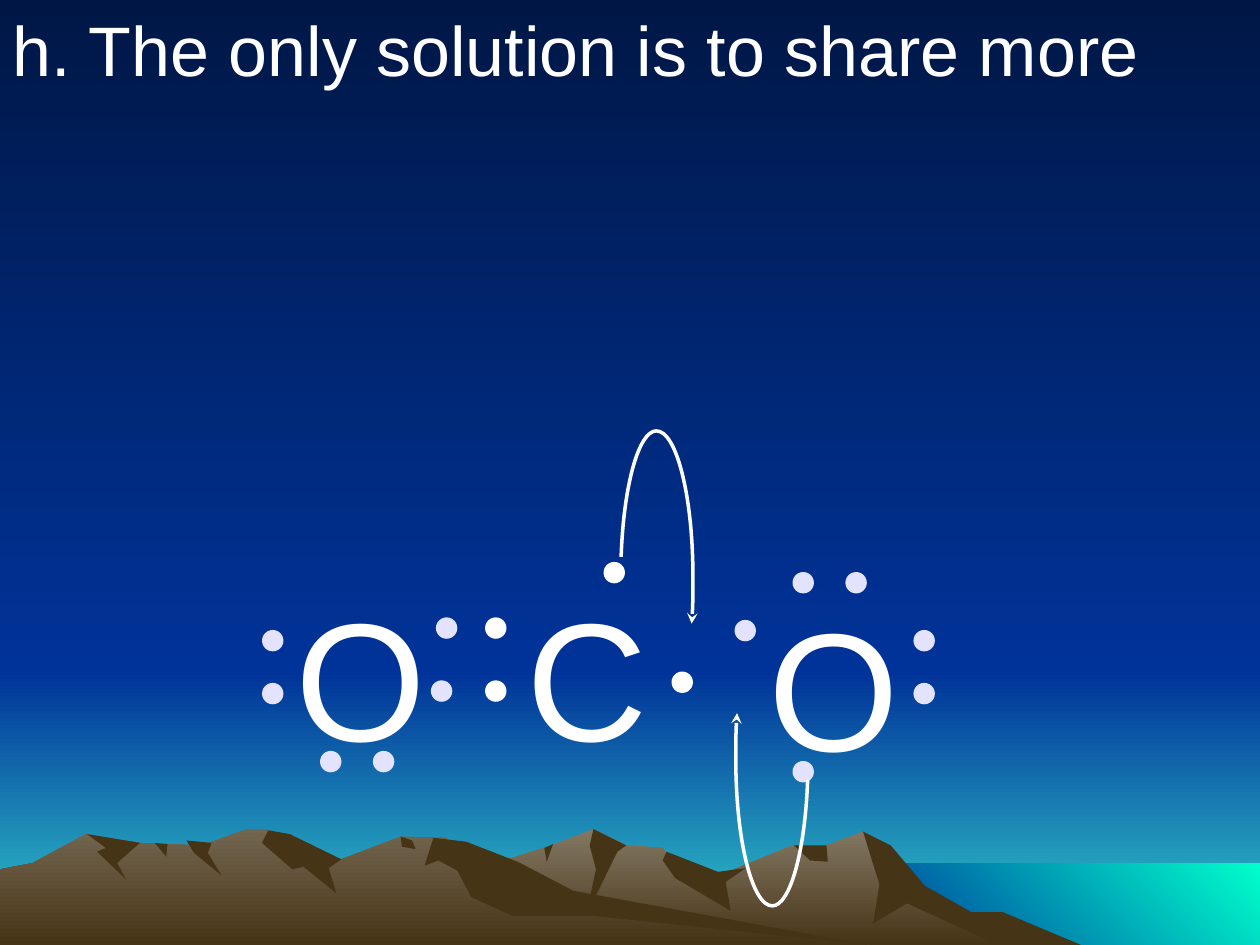
from lxml.etree import SubElement
from pptx import Presentation
from pptx.dml.color import RGBColor
from pptx.enum.shapes import MSO_SHAPE
from pptx.oxml.ns import qn
from pptx.util import Inches, Pt

THEME = {
    "font": "Arial", "title": 40, "atom": 96, "arrow": 2,
    "white": "FFFFFF", "lilac": "E3E3FF", "rock": "463416",
    "sky": ("001746", "003399", 270),
    "haze": ("003399", "33CCCC", 270),
    "sea": ("003399", "00FFCC", 45),
    "far_ridge": ("847864", "463416", 270),
    "near_ridge": ("73664F", "463416", 270),
}
TITLE = "h. The only solution is to share more"
ATOMS = [("O", 6, 4.58), ("C", 4.08, 4.5), ("O", 2.25, 4.5)]
DOT = 0.17
GAP = 0.42
COLUMNS = [(7.25, 5), (2.08, 5)]
ROWS = [(6.29, 4.54), (2.54, 5.96)]
SINGLES = [
    ("lilac", 5.83, 4.92), ("lilac", 6.29, 6.04), ("lilac", 3.42, 5.4), ("lilac", 3.46, 4.9),
    ("white", 5.33, 5.33), ("white", 4.79, 4.46), ("white", 3.85, 4.9), ("white", 3.85, 5.4),
]
UNIT = Inches(0.01)
PANELS = [("haze", 0, 533, 1000, 750), ("sky", 0, 0, 1000, 533), ("sea", 683, 685, 1000, 750)]
LANDSCAPE = [
    ("far_ridge", [
        (821, 750), (764, 723), (723, 698), (685, 660), (656, 671), (629, 671), (566, 697),
        (536, 690), (526, 673), (497, 671), (471, 658), (438, 671), (394, 685), (258, 750)]),
    ("rock", [
        (858, 750), (796, 724), (771, 724), (734, 703), (707, 671), (685, 660), (698, 702),
        (693, 733), (720, 717), (792, 750)]),
    ("rock", [(471, 658), (468, 671), (473, 690), (465, 727), (490, 676), (497, 671)]),
    ("rock", [(529, 676), (526, 683), (536, 697), (580, 723), (576, 700), (592, 689), (570, 692)]),
    ("rock", [(656, 671), (630, 671), (643, 683), (657, 684)]),
    ("rock", [(439, 670), (432, 673), (434, 684)]),
    ("near_ridge", [
        (690, 750), (432, 712), (354, 665), (318, 664), (271, 682), (236, 681), (212, 658),
        (196, 658), (160, 671), (111, 669), (68, 662), (26, 685), (0, 690), (0, 750)]),
    ("rock", [
        (213, 659), (208, 669), (232, 690), (241, 688), (267, 709), (261, 689), (271, 682),
        (230, 662)]),
    ("rock", [
        (370, 668), (344, 665), (337, 687), (348, 683), (363, 691), (374, 712), (407, 727),
        (472, 727), (690, 750), (455, 707), (411, 684)]),
    ("rock", [(318, 664), (327, 667), (330, 674), (319, 672)]),
    ("rock", [(148, 667), (168, 669), (165, 677), (176, 695), (154, 677)]),
    ("rock", [(133, 670), (132, 680), (123, 669)]),
    ("rock", [(111, 669), (93, 685), (100, 698), (77, 676), (84, 673), (69, 662)]),
]
CARBON_ARC = [
    (493, 442), (495, 385), (507, 342), (521, 342), (537, 342), (550, 394), (550, 458),
    (550, 471), (550, 483), (549, 495)]
OXYGEN_ARC = [(1134 - x, 1061 - y) for x, y in CARBON_ARC]


def color(name):
    return RGBColor.from_string(THEME[name])


def paint(fill, name):
    if isinstance(THEME[name], str):
        fill.solid()
        fill.fore_color.rgb = color(name)
        return
    *stops, angle = THEME[name]
    fill.gradient()
    fill.gradient_angle = angle
    for stop, rgb in zip(fill.gradient_stops, stops):
        stop.color.rgb = RGBColor.from_string(rgb)


def add_outline(s, points, close=True):
    builder = s.shapes.build_freeform(*points[0], scale=UNIT)
    builder.add_line_segments(points[1:], close=close)
    sp = builder.convert_to_shape()
    sp.shadow.inherit = False
    return sp


def add_area(s, name, points):
    sp = add_outline(s, points)
    paint(sp.fill, name)
    sp.line.fill.background()


def add_curved_arrow(s, points):
    sp = add_outline(s, points, close=False)
    sp.fill.background()
    sp.line.color.rgb = color("white")
    sp.line.width = Pt(THEME["arrow"])
    ln = sp._element.spPr.find(qn("a:ln"))
    SubElement(ln, qn("a:tailEnd"), type="stealth")
    path = sp._element.find(".//" + qn("a:path"))
    segments = path.findall(qn("a:lnTo"))
    for i in range(0, len(segments), 3):
        curve = SubElement(path, qn("a:cubicBezTo"))
        for segment in segments[i:i + 3]:
            curve.append(segment[0])
            path.remove(segment)


def add_text(s, text, x, y, w, h, size, before, hanging=0):
    tf = s.shapes.add_textbox(Inches(x), Inches(y), Inches(w), Inches(h)).text_frame
    tf.word_wrap = True
    p = tf.paragraphs[0]
    p.space_before = Pt(before)
    if hanging:
        pPr = p._p.get_or_add_pPr()
        pPr.set("marL", str(Inches(hanging)))
        pPr.set("indent", str(-Inches(hanging)))
    r = p.add_run()
    r.text = text
    r.font.name = THEME["font"]
    r.font.size = Pt(THEME[size])
    r.font.color.rgb = color("white")


def add_electron(s, name, x, y):
    sp = s.shapes.add_shape(MSO_SHAPE.OVAL, Inches(x), Inches(y), Inches(DOT), Inches(DOT))
    sp.shadow.inherit = False
    paint(sp.fill, name)
    sp.line.fill.background()


def main():
    prs = Presentation()
    prs.slide_width, prs.slide_height = Inches(10), Inches(7.5)
    s = prs.slides.add_slide(prs.slide_layouts[6])
    paint(s.background.fill, "sky")
    for name, x1, y1, x2, y2 in PANELS:
        add_area(s, name, [(x2, y2), (x1, y2), (x1, y1), (x2, y1)])
    for name, points in LANDSCAPE:
        add_area(s, name, points)
    add_text(s, TITLE, 0, 0, 10, 3.58, "title", 3.6, hanging=0.38)
    for symbol, x, y in ATOMS:
        add_text(s, symbol, x, y, 0.92, 1.7, "atom", 9)
    pairs = [(x, y, 0, GAP) for x, y in COLUMNS] + [(x, y, GAP, 0) for x, y in ROWS]
    for x, y, dx, dy in pairs:
        add_electron(s, "lilac", x, y)
        add_electron(s, "lilac", x + dx, y + dy)
    for name, x, y in SINGLES:
        add_electron(s, name, x, y)
    for arc in (CARBON_ARC, OXYGEN_ARC):
        add_curved_arrow(s, arc)
    prs.save("out.pptx")


if __name__ == "__main__":
    main()
